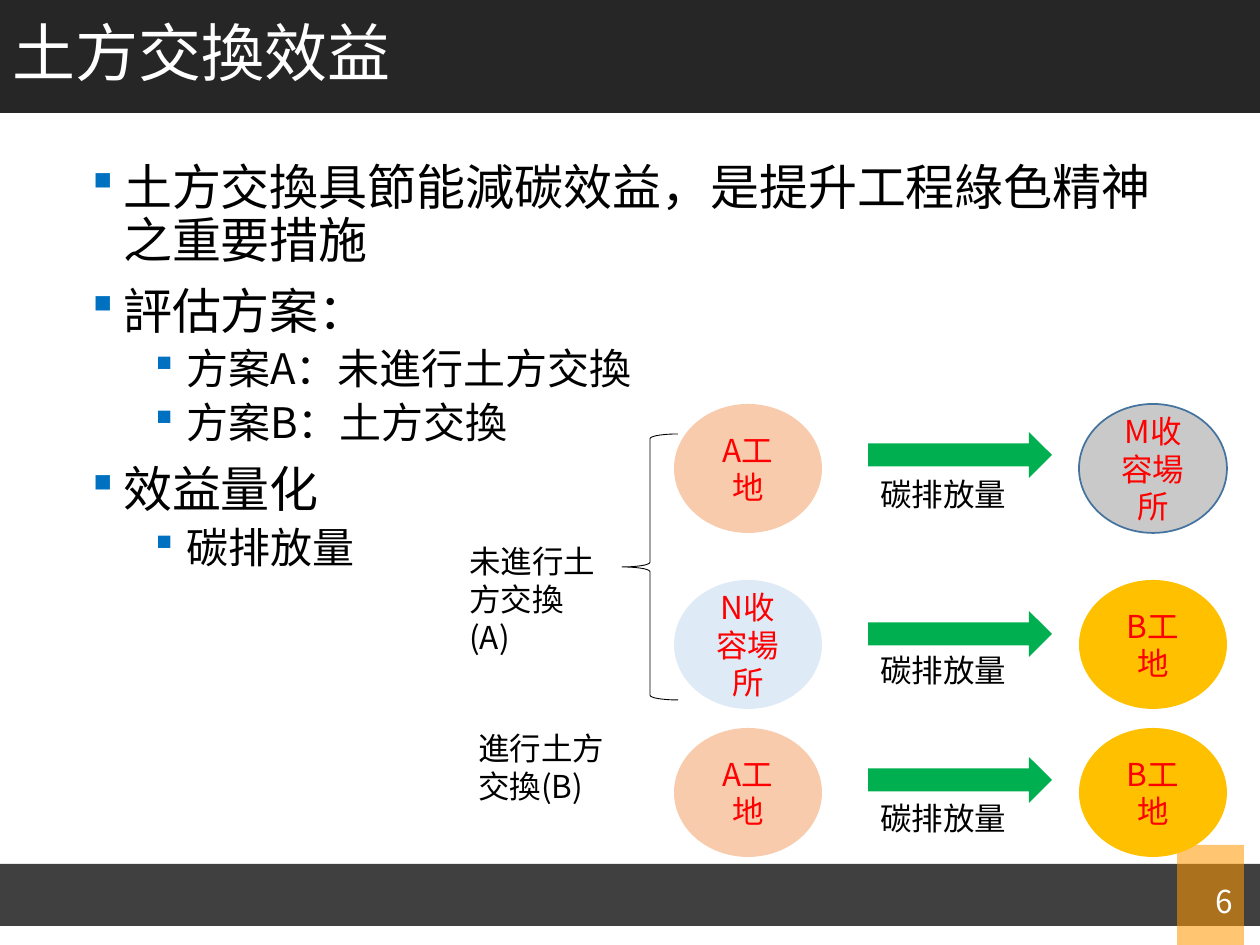
from dataclasses import dataclass

import pptx
import pptx.dml.color
import pptx.enum.shapes
import pptx.enum.text
import pptx.oxml.ns
import pptx.util
from lxml import etree

SHAPE = pptx.enum.shapes.MSO_SHAPE
ALIGN = pptx.enum.text.PP_ALIGN
ANCHOR = pptx.enum.text.MSO_ANCHOR
qn = pptx.oxml.ns.qn
PX_PER_INCH = 126


@dataclass(frozen=True)
class Theme:
    font: str = "Noto Sans CJK JP"
    bullet_font: str = "Wingdings"
    ink: str = "000000"
    paper: str = "FFFFFF"
    header: str = "262626"
    footer: str = "404040"
    accent: str = "FF9900"
    bullet: str = "0070C0"
    arrow: str = "00B050"
    place: str = "FF0000"
    site_a: str = "F8CBAD"
    site_b: str = "FFC000"
    yard_m: str = "C9C9C9"
    yard_n: str = "DEEBF7"
    outline: str = "43739E"
    title_size: int = 36
    item_sizes: tuple[int, int] = (28, 24)
    label_size: int = 18


THEME = Theme()


@dataclass(frozen=True)
class Box:
    left: int
    top: int
    width: int
    height: int

    def emu(self) -> list[int]:
        return [px(n) for n in (self.left, self.top, self.width, self.height)]


@dataclass(frozen=True)
class Place:
    text: str
    fill: str
    line: str | None = None


@dataclass(frozen=True)
class Haul:
    top: int
    arrow_top: int
    origin: Place
    target: Place


@dataclass(frozen=True)
class Item:
    text: str
    level: int = 0


SITE_A = Place("A工地", THEME.site_a)
SITE_B = Place("B工地", THEME.site_b)
HAULS = [
    Haul(404, 432, SITE_A, Place("M收容場所", THEME.yard_m, THEME.outline)),
    Haul(580, 611, Place("N收容場所", THEME.yard_n), SITE_B),
    Haul(728, 757, SITE_A, SITE_B),
]
ITEMS = [
    Item("土方交換具節能減碳效益，是提升工程綠色精神之重要措施"),
    Item("評估方案："),
    Item("方案A：未進行土方交換", 1),
    Item("方案B：土方交換", 1),
    Item("效益量化"),
    Item("碳排放量", 1),
]


def px(length: int) -> int:
    return round(length * pptx.util.Inches(1) / PX_PER_INCH)


def rgb(color: str) -> pptx.dml.color.RGBColor:
    return pptx.dml.color.RGBColor.from_string(color)


def style(paragraph, size: int, color: str) -> None:
    for run in paragraph.runs:
        run.font.size = pptx.util.Pt(size)
        run.font.color.rgb = rgb(color)
        run.font.name = THEME.font
        etree.SubElement(run.font._element, qn("a:ea"), typeface=THEME.font)


def put(shape, box: Box) -> None:
    shape.left, shape.top, shape.width, shape.height = box.emu()


def add_preset(slide, kind, box: Box, fill: str | None = None,
               line: str | None = None, weight: float = 1):
    shape = slide.shapes.add_shape(kind, *box.emu())
    shape.shadow.inherit = False
    if fill:
        shape.fill.solid()
        shape.fill.fore_color.rgb = rgb(fill)
    else:
        shape.fill.background()
    if line:
        shape.line.color.rgb = rgb(line)
        shape.line.width = pptx.util.Pt(weight)
    else:
        shape.line.fill.background()
    return shape


def add_label(slide, text: str, box: Box, color: str = THEME.ink,
              align=ALIGN.LEFT, anchor=ANCHOR.TOP) -> None:
    frame = slide.shapes.add_textbox(*box.emu()).text_frame
    frame.word_wrap = True
    frame.vertical_anchor = anchor
    frame.text = text
    frame.paragraphs[0].alignment = align
    style(frame.paragraphs[0], THEME.label_size, color)


def add_place(slide, place: Place, box: Box) -> None:
    frame = add_preset(slide, SHAPE.OVAL, box, place.fill, place.line).text_frame
    frame.word_wrap = True
    frame.vertical_anchor = ANCHOR.MIDDLE
    frame.text = place.text
    frame.paragraphs[0].alignment = ALIGN.CENTER
    style(frame.paragraphs[0], THEME.label_size, THEME.place)


def add_haul(slide, haul: Haul) -> None:
    add_place(slide, haul.origin, Box(674, haul.top, 148, 129))
    add_place(slide, haul.target, Box(1079, haul.top, 148, 129))
    add_preset(slide, SHAPE.RIGHT_ARROW, Box(868, haul.arrow_top, 184, 46), THEME.arrow)
    add_label(slide, "碳排放量", Box(868, haul.top + 65, 165, 50))


def fill_title(title) -> None:
    put(title, Box(0, 0, 1260, 113))
    title.fill.solid()
    title.fill.fore_color.rgb = rgb(THEME.header)
    frame = title.text_frame
    frame.text = "土方交換效益"
    frame.auto_size = pptx.enum.text.MSO_AUTO_SIZE.NONE
    frame.vertical_anchor = ANCHOR.MIDDLE
    frame.paragraphs[0].alignment = ALIGN.LEFT
    frame.paragraphs[0].line_spacing = 0.9
    style(frame.paragraphs[0], THEME.title_size, THEME.paper)


def fill_body(body) -> None:
    put(body, Box(79, 157, 1086, 600))
    frame = body.text_frame
    frame.text = "\n".join(item.text for item in ITEMS)
    frame.auto_size = pptx.enum.text.MSO_AUTO_SIZE.NONE
    for paragraph, item in zip(frame.paragraphs, ITEMS):
        paragraph.level = item.level
        paragraph.line_spacing = 0.9
        paragraph.space_before = pptx.util.Pt((10, 5)[item.level])
        style(paragraph, THEME.item_sizes[item.level], THEME.ink)
        # Square bullet with a hanging indent
        props = paragraph._p.get_or_add_pPr()
        props.set("marL", str(pptx.util.Inches(0.25 + 0.5 * item.level)))
        props.set("indent", str(-pptx.util.Inches(0.25)))
        color = etree.SubElement(props, qn("a:buClr"))
        etree.SubElement(color, qn("a:srgbClr"), val=THEME.bullet)
        etree.SubElement(props, qn("a:buFont"), typeface=THEME.bullet_font)
        etree.SubElement(props, qn("a:buChar"), char="§")


def main() -> None:
    deck = pptx.Presentation()
    deck.slide_width, deck.slide_height = px(1260), px(945)
    slide = deck.slides.add_slide(deck.slide_layouts[1])

    # Title and outline
    fill_title(slide.shapes.title)
    fill_body(slide.placeholders[1])

    # Footer band and translucent page tab
    add_preset(slide, SHAPE.RECTANGLE, Box(0, 864, 1260, 62), THEME.footer)
    tab = add_preset(slide, SHAPE.RECTANGLE, Box(1177, 845, 67, 102), THEME.accent)
    tab_color = tab.fill._xPr.find(".//" + qn("a:srgbClr"))
    etree.SubElement(tab_color, qn("a:alpha"), val="56000")
    add_label(slide, "6", Box(1147, 876, 98, 50), THEME.paper, ALIGN.RIGHT, ANCHOR.MIDDLE)

    # Haul routes for both options
    for haul in HAULS:
        add_haul(slide, haul)
    add_preset(slide, SHAPE.LEFT_BRACE, Box(622, 434, 56, 266), line=THEME.ink, weight=0.5)
    add_label(slide, "未進行土方交換(A)", Box(457, 536, 151, 89))
    add_label(slide, "進行土方交換(B)", Box(466, 723, 163, 89))

    deck.save("out.pptx")


if __name__ == "__main__":
    main()
